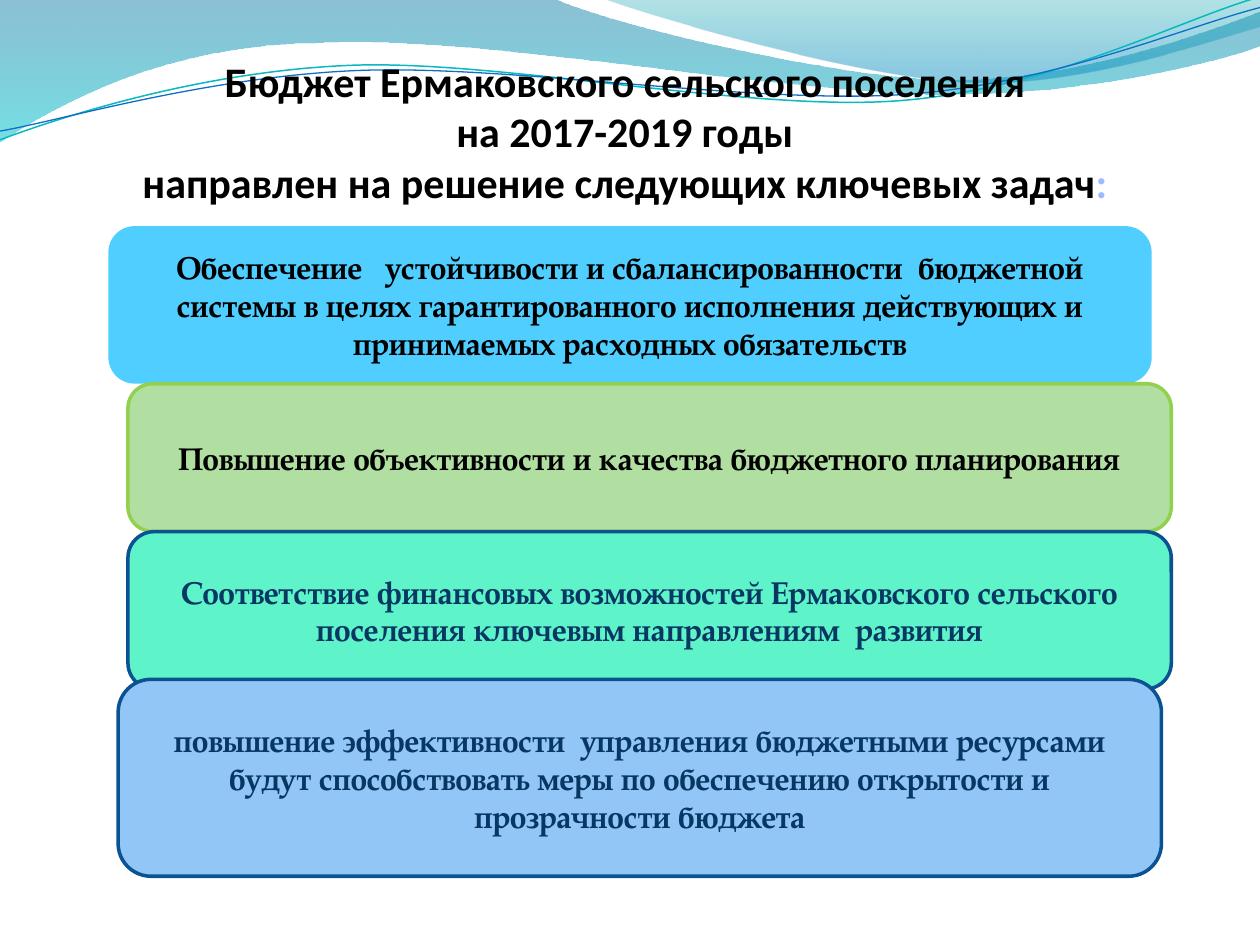
from lxml import etree
from pptx import Presentation
from pptx.dml.color import RGBColor
from pptx.enum.shapes import MSO_SHAPE
from pptx.enum.text import MSO_ANCHOR, PP_ALIGN
from pptx.oxml.ns import qn
from pptx.util import Pt

ROUNDED = MSO_SHAPE.ROUNDED_RECTANGLE
MIDDLE, BOTTOM = MSO_ANCHOR.MIDDLE, MSO_ANCHOR.BOTTOM
CENTER = PP_ALIGN.CENTER

TITLE = ("Бюджет Ермаковского сельского поселения\vна 2017-2019 годы\v"
         "направлен на решение следующих ключевых задач")
CARD_WIDTH = 596.2
TASKS = [
    (61.9, 129.2, 90, "4FCEFF", None, "000000",
     "Обеспечение   устойчивости и сбалансированности  бюджетной системы в целях "
     "гарантированного исполнения действующих и принимаемых расходных обязательств"),
    (73.1, 219.3, 84.4, "B0DFA1", "92D050", "000000",
     "Повышение объективности и качества бюджетного планирования"),
    (73.1, 303.8, 90, "5FF3CA", "0B5292", "083763",
     "Соответствие финансовых возможностей Ермаковского сельского поселения "
     "ключевым направлениям  развития"),
    (67.5, 388.2, 112.5, "91C6F7", "0B5292", "083763",
     "повышение эффективности  управления бюджетными ресурсами будут способствовать "
     "меры по обеспечению открытости и прозрачности бюджета"),
]

WIDE_WAVE = [
    (0, -0.7), (316.8, -0.7),
    (342.7, 12.2, 478.1, 45.4, 545.8, 45.4), (614.2, 45.4, 689.8, 18.7, 720, 6.5),
    (720.7, 25.9),
    (707.8, 31.7, 626.4, 54.7, 537.1, 54), (447.8, 54, 275, 20.2, 185, 24.5),
    (92.9, 25.2, 33.1, 59.8, -0.7, 81.4),
]
CORNER_WAVE = [
    (344.9, -0.7),
    (366.5, 7.9, 491, 44.6, 553.7, 46.8), (616.3, 49.7, 691.9, 23, 720, 15.1),
    (720, 0),
]
TEAL_STRAND = [
    (0, 79.9),
    (34.6, 67, 113.8, 41, 199.4, 37.4), (284.4, 33.8, 427, 64.1, 513.4, 57.6),
    (599.8, 51.1, 675.4, 10.8, 718.6, -1.4),
]
BLUE_STRAND = [
    (0, 74.9),
    (33.8, 69.1, 118.1, 43.9, 203.8, 40.3), (290.2, 36.7, 429.8, 59.8, 516.2, 54),
    (601.9, 48.2, 677.5, 15.1, 720, 4.3),
]


def color(hex_string):
    return RGBColor.from_string(hex_string)


def bend(shape, segments):
    edges = iter(list(shape.element.spPr.iter(qn("a:lnTo"))))
    for segment in segments[1:]:
        corners = [next(edges) for _ in range(len(segment) // 2)]
        if len(corners) == 1:
            continue
        curve = etree.Element(qn("a:cubicBezTo"))
        corners[0].addprevious(curve)
        for corner in corners:
            curve.append(corner[0])
            corner.getparent().remove(corner)


class BudgetSlide:
    title_font, title_size = "Calibri", 24
    card_font, card_size = "TeX Gyre Pagella", 18
    border_width = 2

    def __init__(self, presentation):
        self.slide = presentation.slides.add_slide(presentation.slide_layouts[6])

    def outline(self, segments, close):
        points = [(Pt(x), Pt(y)) for segment in segments
                  for x, y in zip(segment[::2], segment[1::2])]
        builder = self.slide.shapes.build_freeform(*points[0], scale=1.0)
        builder.add_line_segments(points[1:], close=close)
        shape = builder.convert_to_shape()
        bend(shape, segments)
        shape.shadow.inherit = False
        return shape

    def wave(self, segments, stops):
        shape = self.outline(segments, True)
        shape.line.fill.background()
        shape.fill.gradient()
        shape.fill.gradient_angle = 270
        for stop, (position, hex_string, _) in zip(shape.fill.gradient_stops, stops):
            stop.position = position
            stop.color.rgb = color(hex_string)
        for tone, (_, _, opacity) in zip(shape.element.spPr.iter(qn("a:srgbClr")), stops):
            etree.SubElement(tone, qn("a:alpha")).set("val", str(opacity * 1000))

    def strand(self, segments, hex_string, width):
        shape = self.outline(segments, False)
        shape.fill.background()
        shape.line.color.rgb = color(hex_string)
        shape.line.width = Pt(width)

    def style(self, run, font, size, hex_string):
        run.font.name = font
        run.font.size = Pt(size)
        run.font.bold = True
        run.font.color.rgb = color(hex_string)

    def title(self, left, top, width, height, text, ending):
        frame = self.slide.shapes.add_textbox(
            Pt(left), Pt(top), Pt(width), Pt(height)).text_frame
        frame.word_wrap = True
        frame.vertical_anchor = BOTTOM
        frame.margin_left = frame.margin_right = frame.margin_bottom = 0
        heading = frame.paragraphs[0]
        heading.text = text
        heading.alignment = CENTER
        for run in heading.runs:
            self.style(run, self.title_font, self.title_size, "000000")
        colon = heading.add_run()
        colon.text = ending
        self.style(colon, self.title_font, self.title_size, "9EBAFF")

    def card(self, left, top, height, fill, border, ink, text):
        shape = self.slide.shapes.add_shape(
            ROUNDED, Pt(left), Pt(top), Pt(CARD_WIDTH), Pt(height))
        shape.shadow.inherit = False
        shape.fill.solid()
        shape.fill.fore_color.rgb = color(fill)
        if border:
            shape.line.color.rgb = color(border)
            shape.line.width = Pt(self.border_width)
        else:
            shape.line.fill.background()
        frame = shape.text_frame
        frame.word_wrap = True
        frame.vertical_anchor = MIDDLE
        frame.text = text
        task = frame.paragraphs[0]
        task.alignment = CENTER
        self.style(task.runs[0], self.card_font, self.card_size, ink)


def main():
    presentation = Presentation()
    presentation.slide_width, presentation.slide_height = Pt(720), Pt(540)
    budget = BudgetSlide(presentation)
    budget.wave(WIDE_WAVE, [(0, "0074A1", 45), (1, "00C6CF", 55)])
    budget.wave(CORNER_WAVE, [(0, "00A1A9", 30), (0.8, "008BBF", 45)])
    budget.strand(TEAL_STRAND, "0AB8BF", 0.85)
    budget.strand(BLUE_STRAND, "0F6FC6", 0.75)
    budget.title(22.3, 28.1, 669.6, 90, TITLE, ":")
    for task in TASKS:
        budget.card(*task)
    presentation.save("out.pptx")


if __name__ == "__main__":
    main()
